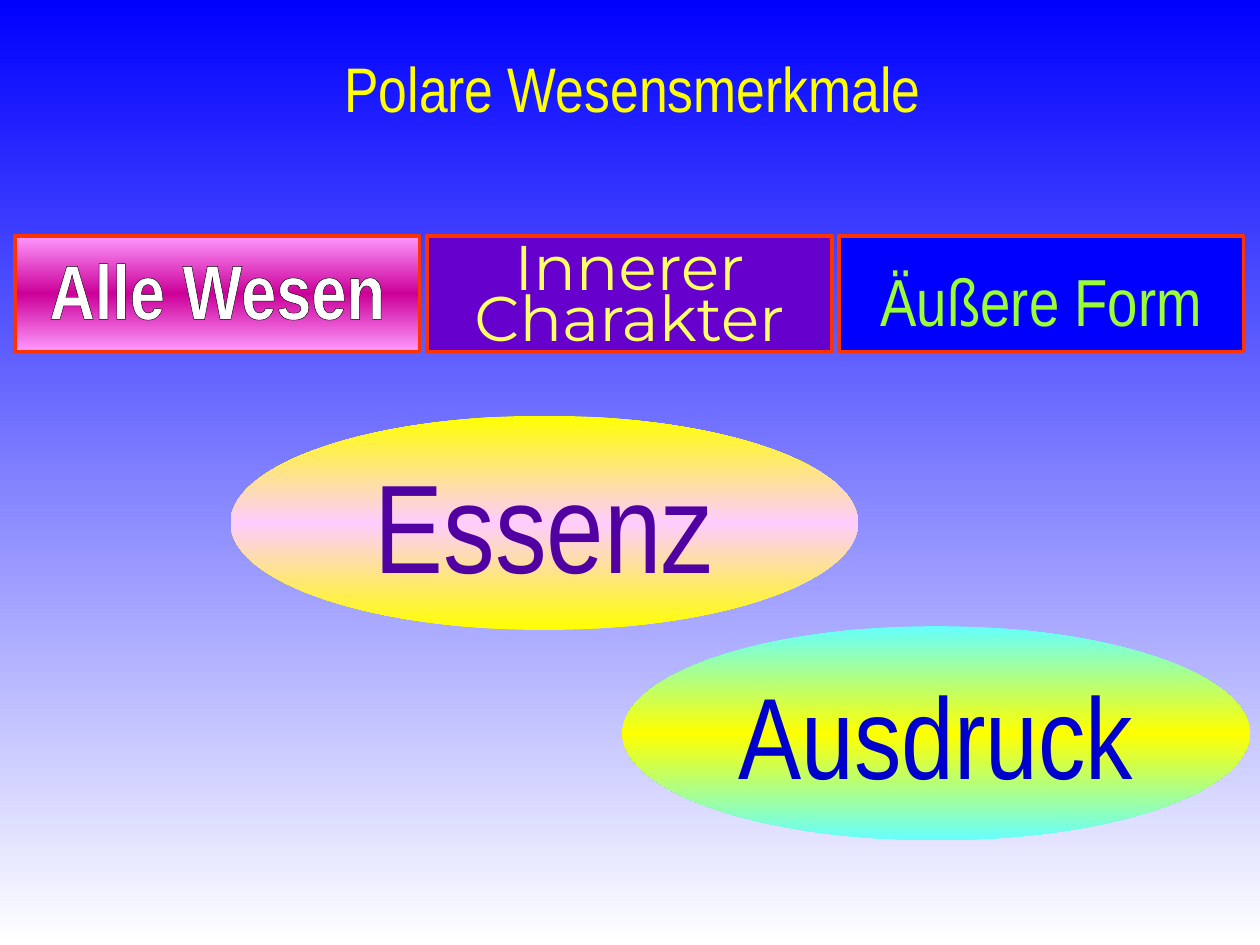
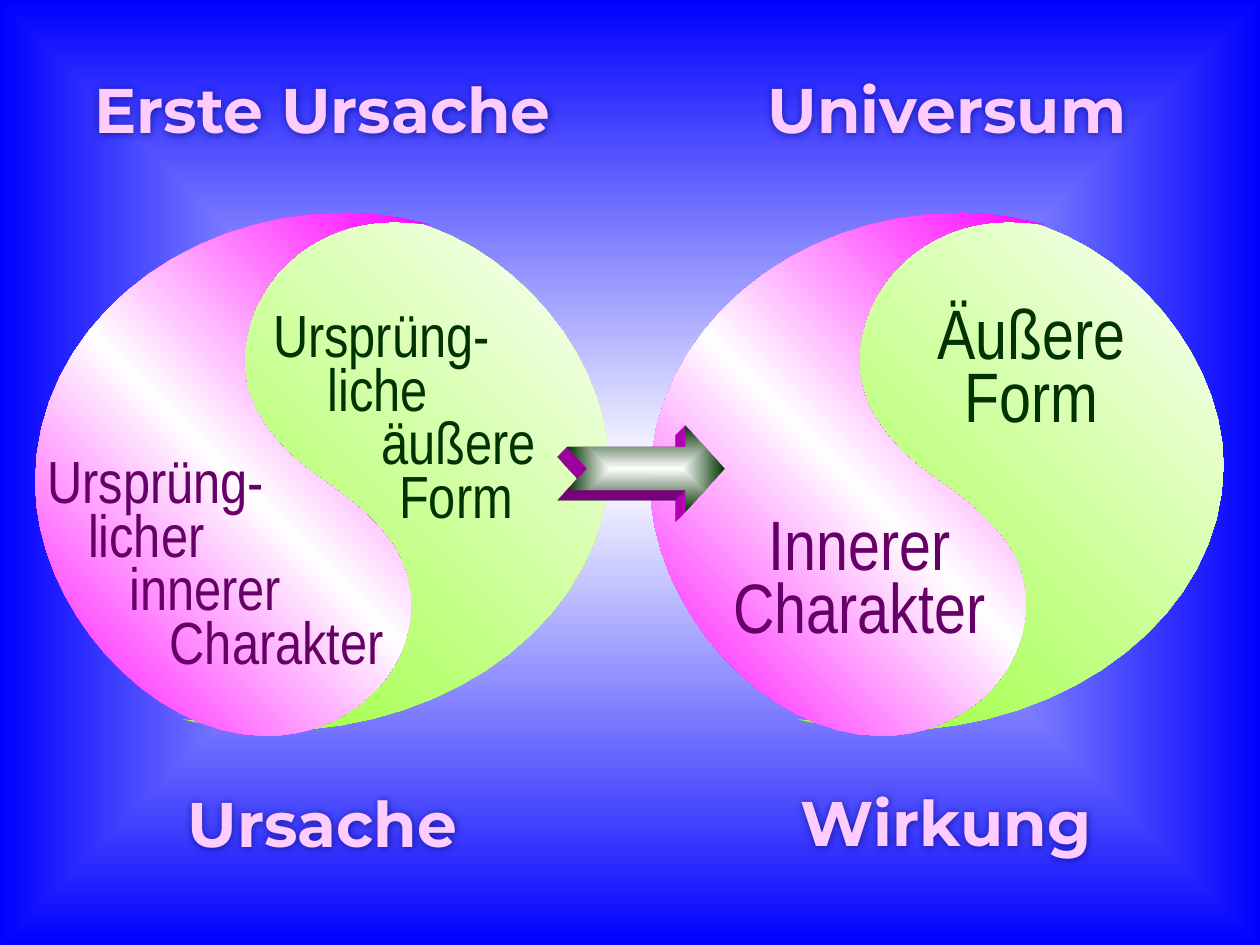
from typing import NamedTuple

from lxml import etree
from pptx import Presentation
from pptx.dml.color import RGBColor
from pptx.enum.shapes import MSO_SHAPE
from pptx.enum.text import MSO_ANCHOR, MSO_AUTO_SIZE, PP_ALIGN
from pptx.oxml import parse_xml
from pptx.oxml.ns import nsdecls, qn
from pptx.util import Inches, Pt

RECTANGLE, OVAL = MSO_SHAPE.RECTANGLE, MSO_SHAPE.OVAL
NOTCHED_ARROW = MSO_SHAPE.NOTCHED_RIGHT_ARROW
TOP, MIDDLE = MSO_ANCHOR.TOP, MSO_ANCHOR.MIDDLE
LEFT, CENTER = PP_ALIGN.LEFT, PP_ALIGN.CENTER

NARROW, ROUND = "Arial Narrow", "Montserrat"
BLUE = RGBColor(0x00, 0x00, 0xFF)
DARK_BLUE = RGBColor(0x00, 0x00, 0xCC)
NAVY = RGBColor(0x00, 0x00, 0x66)
WHITE = RGBColor(0xFF, 0xFF, 0xFF)
BLACK = RGBColor(0x00, 0x00, 0x00)
YELLOW = RGBColor(0xFF, 0xFF, 0x00)
PALE_YELLOW = RGBColor(0xFF, 0xFF, 0x66)
ORANGE = RGBColor(0xFF, 0x99, 0x33)
RED = RGBColor(0xFF, 0x33, 0x00)
CYAN = RGBColor(0x66, 0xFF, 0xFF)
LIME = RGBColor(0x99, 0xFF, 0x33)
DARK_GREEN = RGBColor(0x00, 0x33, 0x00)
ROSE = RGBColor(0xFF, 0xCC, 0xFF)
PINK = RGBColor(0xFF, 0x99, 0xFF)
MAGENTA = RGBColor(0xFF, 0x00, 0xFF)
CRIMSON = RGBColor(0xCC, 0x00, 0x99)
LILAC = RGBColor(0xCC, 0x66, 0xFF)
VIOLET = RGBColor(0x66, 0x00, 0xCC)
INDIGO = RGBColor(0x51, 0x00, 0xA2)
PLUM = RGBColor(0x66, 0x00, 0x66)
PURPLE = RGBColor(0xCC, 0x00, 0xCC)


class Gradient(NamedTuple):
    """Evenly spaced colours along an angle in degrees or a named path."""
    colours: list
    direction: object


class Style(NamedTuple):
    """Text style; colour is an RGBColor or a Gradient, outline is (colour, points)."""
    font: str
    size: int
    colour: object
    bold: bool = False
    outline: tuple = None


class HeaderCell(NamedTuple):
    lines: list
    fill: object
    style: Style
    spacings: list
    top_inset: float = 0.05


class SymbolLabel(NamedTuple):
    lines: list
    box: tuple
    style: Style
    align: object = CENTER
    indents: tuple = (0, 0)


SKY = Gradient([BLUE, WHITE], 90)
GLOW = Gradient([WHITE, BLUE], "shape")
ARROW_FILL = Gradient([WHITE, DARK_GREEN], "rect")
OUTER_FILL = Gradient([LIME, WHITE], 315)
INNER_FILL = Gradient([MAGENTA, WHITE, MAGENTA], 315)

TITLE = "Polare Wesensmerkmale"
TITLE_BOX = (0.44, 0.34, 9.16, 1.12)
TITLE_STYLE = Style(NARROW, 36, Gradient([YELLOW, ORANGE], "rect"), outline=(NAVY, 2.25))

HEADER_CELLS = [
    HeaderCell(["Alle Wesen"], Gradient([PINK, CRIMSON, PINK], 90),
               Style(NARROW, 44, WHITE, True, (BLACK, 0.75)), [Pt(47)]),
    HeaderCell(["Innerer", "Charakter"], VIOLET,
               Style(ROUND, 36, PALE_YELLOW, outline=(BLACK, 0.25)), [Pt(40), Pt(29)]),
    HeaderCell(["Äußere Form"], BLUE,
               Style(NARROW, 38, LIME, outline=(BLACK, 0.25)), [0.75], top_inset=0.28),
]
CELL_LEFT, CELL_TOP, CELL_WIDTH, CELL_HEIGHT, CELL_GAP = 0.12, 1.87, 3.21, 0.92, 0.06

ELLIPSE_SIZE = (4.98, 1.7)
ELLIPSES = [
    ("Essenz", (1.83, 3.3), Gradient([YELLOW, ROSE, YELLOW], 90), Style(NARROW, 72, INDIGO)),
    ("Ausdruck", (4.94, 4.97), Gradient([CYAN, YELLOW, CYAN], 90), Style(NARROW, 66, DARK_BLUE)),
]

HEADING_STYLE = Style(ROUND, 36, Gradient([ROSE, LILAC], 0), True, (DARK_GREEN, 2.25))
HEADINGS = [
    ("Erste Ursache", (0.37, 0.51, 4.38, 0.79)),
    ("Universum", (5.75, 0.51, 3.53, 0.79)),
    ("Ursache", (0.95, 6.18, 3.22, 0.71)),
    ("Wirkung", (5.9, 6.17, 3.22, 0.9)),
]

LABEL_SPACING = 0.75
SYMBOL_LABELS = [
    SymbolLabel(["Innerer", "Charakter"], (5.58, 4.08, 2.48, 1.1), Style(NARROW, 40, PLUM)),
    SymbolLabel(["Äußere", "Form"], (7.25, 2.4, 1.87, 1.11), Style(NARROW, 40, DARK_GREEN)),
    SymbolLabel(["Ursprüng-", "licher", "innerer", "Charakter"], (0.28, 3.61, 2.89, 1.8),
                Style(NARROW, 34, PLUM), LEFT, (0, 0.32, 0.65, 0.97)),
    SymbolLabel(["Ursprüng-", "liche", "äußere", "Form"], (2.07, 2.45, 2.28, 1.82),
                Style(NARROW, 34, DARK_GREEN), LEFT, (0, 0.43, 0.86, 1)),
]

ARROW_BOX = (4.5, 3.38, 1.25, 0.68)

# The outer half of a symbol runs through these named turning points (inches)
CREST, LOBE, WAIST, BULGE = (2.85, 1.7), (1.61, 2.73), (2.37, 3.71), (3.04, 4.63)
BASE, TIP, FOOT, FLANK = (1.77, 5.73), (1.45, 5.71), (2.17, 5.8), (4.83, 3.69)
# Bézier curves between them: start, pull at the start, pull at the end, end
OUTER_CURVES = [
    (CREST, (2.17, 1.7), (1.61, 2.16), LOBE),
    (LOBE, (1.61, 3.2), (2.02, 3.48), WAIST),
    (WAIST, (2.75, 3.94), (3.04, 4.27), BULGE),
    (BULGE, (3.04, 5.24), (2.47, 5.73), BASE),
    (BASE, (1.66, 5.73), (1.56, 5.72), TIP),
    (TIP, (1.68, 5.76), (1.93, 5.8), FOOT),
    (FOOT, (3.63, 5.8), (4.83, 4.86), FLANK),
    (FLANK, (4.83, 2.72), (3.86, 1.7), CREST),
]
CURVE_STEPS = 16
OUTER_EDGES = (1.45, 1.7, 4.83, 5.8)  # left, top, right, bottom
INNER_EDGES = (0.28, 1.69, 3.41, 5.84)
SYMBOL_STEP = 4.88


def place(box):
    return [Inches(length) for length in box]


def use_gradient(parent, gradient):
    """Swap the solid fill directly under parent for a gradient."""
    fill = parse_xml(f'<a:gradFill {nsdecls("a")} rotWithShape="1"><a:gsLst/></a:gradFill>')
    last = len(gradient.colours) - 1
    for index, colour in enumerate(gradient.colours):
        stop = etree.SubElement(fill[0], qn("a:gs"), pos=str(100000 * index // last))
        etree.SubElement(stop, qn("a:srgbClr"), val=str(colour))
    if isinstance(gradient.direction, str):
        path = etree.SubElement(fill, qn("a:path"), path=gradient.direction)
        etree.SubElement(path, qn("a:fillToRect"), l="50000", t="50000", r="50000", b="50000")
    else:
        etree.SubElement(fill, qn("a:lin"), ang=str(gradient.direction * 60000), scaled="1")
    parent.replace(parent.find(qn("a:solidFill")), fill)


def paint(shape, fill):
    shape.shadow.inherit = False
    shape.fill.solid()
    if isinstance(fill, Gradient):
        use_gradient(shape.element.spPr, fill)
    else:
        shape.fill.fore_color.rgb = fill
    shape.line.fill.background()


def set_background(page, gradient):
    page.background.fill.solid()
    use_gradient(page.element.find(".//" + qn("p:bgPr")), gradient)


def outline_text(span, colour, points):
    span._r.get_or_add_rPr().insert(0, parse_xml(
        f'<a:ln {nsdecls("a")} w="{Pt(points)}"><a:solidFill>'
        f'<a:srgbClr val="{colour}"/></a:solidFill></a:ln>'))


def write(shape, lines, style, align=CENTER, anchor=TOP, spacings=None, indents=None):
    """Fill a shape with one paragraph a line; spacings and indents go line by line."""
    frame = shape.text_frame
    frame.text = "\n".join(lines)
    frame.word_wrap = False
    frame.auto_size = MSO_AUTO_SIZE.NONE
    frame.vertical_anchor = anchor
    for index, para in enumerate(frame.paragraphs):
        span = para.runs[0]
        para.alignment = align
        para.font.name, para.font.size, para.font.bold = style.font, Pt(style.size), style.bold
        if spacings:
            para.line_spacing = spacings[index]
        if indents and indents[index]:
            para._p.get_or_add_pPr().set("marL", str(Inches(indents[index])))
        if isinstance(style.colour, Gradient):
            span.font.fill.solid()
            use_gradient(span._r.get_or_add_rPr(), style.colour)
        else:
            para.font.color.rgb = style.colour
        if style.outline:
            outline_text(span, *style.outline)


def add_soft_shadow(shape):
    shape.element.spPr.append(parse_xml(
        f'<a:effectLst {nsdecls("a")}><a:outerShdw blurRad="63500" dist="0" dir="0">'
        f'<a:srgbClr val="{NAVY}"><a:alpha val="60000"/></a:srgbClr></a:outerShdw></a:effectLst>'))


def add_depth(shape, colour):
    """Extrude the shape towards the lower left."""
    shape.element.spPr.append(parse_xml(
        f'<a:scene3d {nsdecls("a")}><a:camera prst="legacyObliqueBottomLeft"/>'
        '<a:lightRig rig="legacyFlat3" dir="b"/></a:scene3d>'))
    shape.element.spPr.append(parse_xml(
        f'<a:sp3d {nsdecls("a")} extrusionH="201600" prstMaterial="legacyMatte">'
        f'<a:extrusionClr><a:srgbClr val="{colour}"/></a:extrusionClr></a:sp3d>'))


def trace(curves):
    """Sample cubic Bézier curves into one closed run of points."""
    points = []
    for curve in curves:
        for step in range(CURVE_STEPS):
            t = step / CURVE_STEPS
            weights = ((1 - t) ** 3, 3 * t * (1 - t) ** 2, 3 * t ** 2 * (1 - t), t ** 3)
            points.append(tuple(sum(weight * value for weight, value in zip(weights, axis))
                                for axis in zip(*curve)))
    return points


def turn_into_inner_half(points):
    """Turn the outer half by 180 degrees and stretch it between the inner half's edges."""
    left, top, right, bottom = OUTER_EDGES
    inner_left, inner_top, inner_right, inner_bottom = INNER_EDGES
    x_scale = (inner_right - inner_left) / (right - left)
    y_scale = (inner_bottom - inner_top) / (bottom - top)
    return [(inner_right - (x - left) * x_scale, inner_bottom - (y - top) * y_scale)
            for x, y in points]


def add_half(page, points, shift, fill):
    corners = [(Inches(x + shift), Inches(y)) for x, y in points]
    builder = page.shapes.build_freeform(*corners[0])
    builder.add_line_segments(corners[1:], close=True)
    paint(builder.convert_to_shape(), fill)


def build_traits_page(deck):
    page = deck.slides.add_slide(deck.slide_layouts.get_by_name("Title Only"))
    set_background(page, SKY)
    title = page.shapes.title
    title.left, title.top, title.width, title.height = place(TITLE_BOX)
    write(title, [TITLE], TITLE_STYLE)

    for column, header in enumerate(HEADER_CELLS):
        left = CELL_LEFT + column * (CELL_WIDTH + CELL_GAP)
        cell = page.shapes.add_shape(RECTANGLE, *place((left, CELL_TOP, CELL_WIDTH, CELL_HEIGHT)))
        paint(cell, header.fill)
        cell.line.color.rgb = RED
        cell.line.width = Pt(2.25)
        write(cell, header.lines, header.style, anchor=MIDDLE, spacings=header.spacings)
        cell.text_frame.margin_top = Inches(header.top_inset)

    for word, corner, fill, style in ELLIPSES:
        ellipse = page.shapes.add_shape(OVAL, *place(corner + ELLIPSE_SIZE))
        paint(ellipse, fill)
        write(ellipse, [word], style, anchor=MIDDLE)


def build_cause_page(deck):
    page = deck.slides.add_slide(deck.slide_layouts.get_by_name("Blank"))
    set_background(page, GLOW)
    outer_half = trace(OUTER_CURVES)
    inner_half = turn_into_inner_half(outer_half)
    for shift in (SYMBOL_STEP, 0):
        add_half(page, outer_half, shift, OUTER_FILL)
        add_half(page, inner_half, shift, INNER_FILL)

    arrow = page.shapes.add_shape(NOTCHED_ARROW, *place(ARROW_BOX))
    arrow.adjustments[0], arrow.adjustments[1] = 0.5, 0.46
    paint(arrow, ARROW_FILL)
    add_depth(arrow, PURPLE)

    for label in SYMBOL_LABELS:
        write(page.shapes.add_textbox(*place(label.box)), label.lines, label.style, label.align,
              spacings=[LABEL_SPACING] * len(label.lines), indents=label.indents)

    for word, box in HEADINGS:
        heading = page.shapes.add_textbox(*place(box))
        write(heading, [word], HEADING_STYLE)
        add_soft_shadow(heading)


def main():
    deck = Presentation()
    deck.slide_width, deck.slide_height = Inches(10), Inches(7.5)
    build_traits_page(deck)
    build_cause_page(deck)
    deck.save("out.pptx")


if __name__ == "__main__":
    main()
